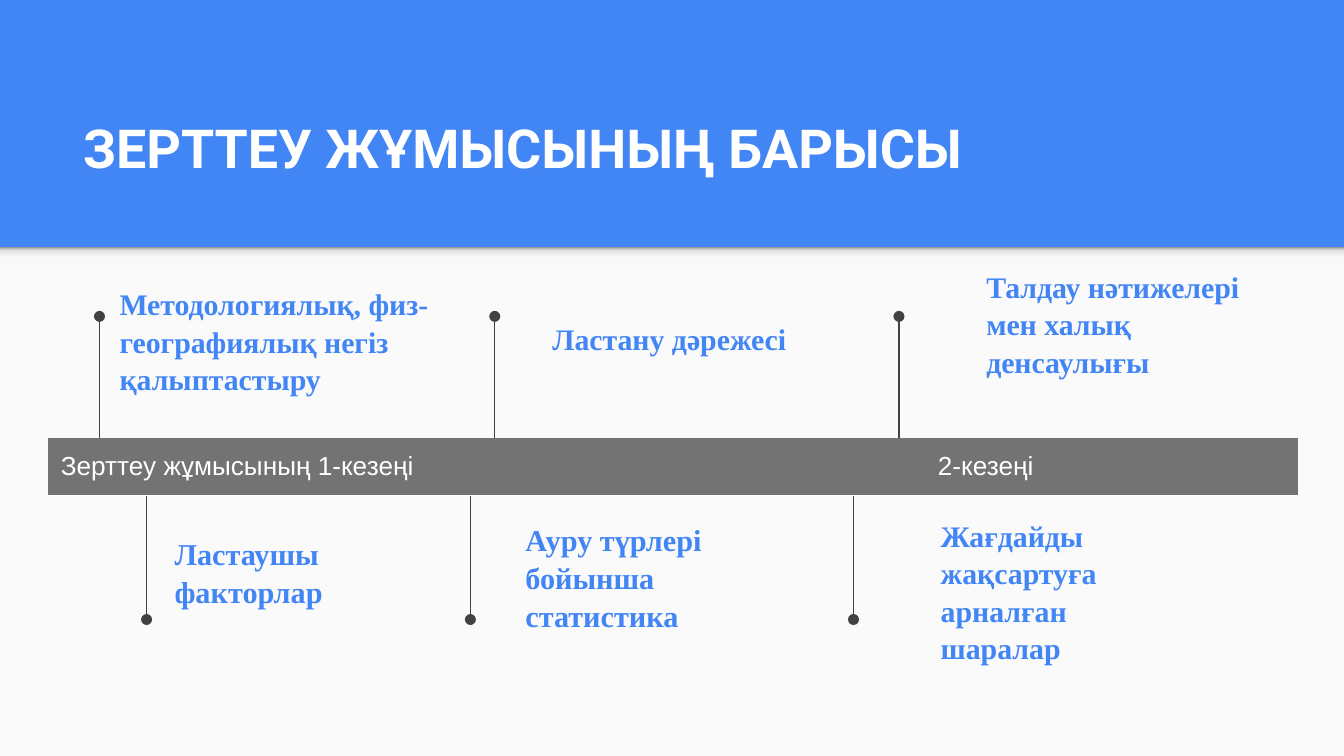
from pptx import Presentation
from pptx import util as u
from pptx.dml.color import RGBColor
from pptx.enum import shapes, text
from pptx.oxml import parse_xml
from pptx.oxml.ns import nsdecls

BLUE = RGBColor(0x42, 0x85, 0xF4)
PALE = RGBColor(0xFA, 0xFA, 0xFA)
WHITE = RGBColor(0xFF, 0xFF, 0xFF)
GREY = RGBColor(0x73, 0x73, 0x73)
DARK = RGBColor(0x42, 0x42, 0x42)

WIDE, HIGH, TOP = 25.4, 14.29, 4.67
HEAD = ("ЗЕРТТЕУ ЖҰМЫСЫНЫҢ БАРЫСЫ", (1.32, 2.06, 22.83, 2.13))
NOTES = [
    ("Методологиялық, физ-географиялық негіз қалыптастыру", (2.01, 5.05, 7.04, 2.77), 16),
    ("Ластану дәрежесі", (10.19, 5.26, 5.82, 2.26), 16),
    ("Талдау нәтижелері мен халық денсаулығы", (18.39, 5.56, 5.36, 1.09), 16),
    ("Ластаушы факторлар", (3.05, 10.26, 5.03, 1.09), 16.2),
    ("Ауру түрлері бойынша статистика", (9.68, 10.36, 5.41, 1.09), 16.2),
    ("Жағдайды жақсартуға арналған шаралар", (17.53, 10.62, 4.75, 1.09), 16),
]
STAGES = [
    ("Зерттеу жұмысының 1-кезеңі", text.PP_ALIGN.LEFT),
    ("2-кезеңі", text.PP_ALIGN.CENTER),
]
BAR = (0.9, 8.28, 23.64, 1.08)
PINS = [(8.3, 5.98, (1.88, 9.35, 16.99)), (9.38, 11.71, (2.77, 8.89, 16.13))]
SHADE = [(0, "F9F9F9"), (36, "F9F9F9"), (80, "DEDEDE"), (100, "999999")]


def place(shape, box):
    for name, size in zip(("left", "top", "width", "height"), box):
        setattr(shape, name, u.Cm(size))


def write(frame, words, font, align=text.PP_ALIGN.LEFT, space=1.0):
    par = frame.paragraphs[0]
    par.alignment, par.line_spacing = align, space
    run = par.add_run()
    run.text = words
    run.font.color.rgb = font["color"]
    for name in ("name", "size", "bold"):
        setattr(run.font, name, font[name])


def inset(frame, anchor, **extra):
    form = {f"margin_{side}": u.Cm(0.25) for side in ("left", "right", "top", "bottom")}
    form.update(word_wrap=True, auto_size=text.MSO_AUTO_SIZE.NONE, vertical_anchor=anchor)
    form.update(extra)
    for name, value in form.items():
        setattr(frame, name, value)


def panel(slide, height):
    box = slide.shapes.add_shape(
        shapes.MSO_SHAPE.RECTANGLE, 0, u.Cm(TOP), u.Cm(WIDE), u.Cm(height))
    box.shadow.inherit = False
    box.line.fill.background()
    return box


def shade(box):
    stops = "".join(
        f'<a:gs pos="{pos * 1000}"><a:srgbClr val="{tint}"/></a:gs>' for pos, tint in SHADE)
    box.fill.background()
    old = box._element.spPr.find(".//{*}noFill")
    old.getparent().replace(old, parse_xml(
        f'<a:gradFill {nsdecls("a")}><a:gsLst>{stops}</a:gsLst>'
        '<a:lin ang="16200000" scaled="0"/></a:gradFill>'))


def pin(slide, x, start, end):
    line = slide.shapes.add_connector(
        shapes.MSO_CONNECTOR.STRAIGHT, u.Cm(x), u.Cm(start), u.Cm(x), u.Cm(end))
    line.line.color.rgb = DARK
    line.line.width = u.Pt(0.75)
    line.line._get_or_add_ln().append(parse_xml(f'<a:tailEnd {nsdecls("a")} type="oval"/>'))
    line._element.spPr.append(parse_xml(f'<a:effectLst {nsdecls("a")}/>'))


def bar(slide):
    grid = slide.shapes.add_table(1, len(STAGES), *map(u.Cm, BAR)).table
    grid.first_row = grid.horz_banding = False
    font = dict(name="Arial", size=u.Pt(14), bold=False, color=WHITE)
    for cell, (words, align) in zip(grid.iter_cells(), STAGES):
        for side in "LRTB":
            cell._tc.get_or_add_tcPr().append(
                parse_xml(f'<a:ln{side} {nsdecls("a")} w="0"><a:noFill/></a:ln{side}>'))
        cell.fill.solid()
        cell.fill.fore_color.rgb = GREY
        for side in ("left", "right", "top", "bottom"):
            setattr(cell, f"margin_{side}", u.Cm(0.25))
        write(cell.text_frame, words, font, align)


def main():
    deck = Presentation()
    deck.slide_width, deck.slide_height = u.Cm(WIDE), u.Cm(HIGH)
    slide = deck.slides.add_slide(deck.slide_layouts[5])
    slide.background.fill.solid()
    slide.background.fill.fore_color.rgb = BLUE

    base = panel(slide, HIGH - TOP)
    base.fill.solid()
    base.fill.fore_color.rgb = PALE
    shade(panel(slide, 0.3))

    words, box = HEAD
    title = slide.shapes.title
    place(title, box)
    inset(title.text_frame, text.MSO_ANCHOR.BOTTOM, margin_top=0, margin_bottom=u.Cm(0.81))
    write(title.text_frame, words,
          dict(name="Roboto", size=u.Pt(28.8), bold=True, color=WHITE))

    for start, end, spots in PINS:
        for x in spots:
            pin(slide, x, start, end)
    bar(slide)
    for words, box, size in NOTES:
        note = slide.shapes.add_textbox(*map(u.Cm, box))
        inset(note.text_frame, text.MSO_ANCHOR.MIDDLE)
        write(note.text_frame, words,
              dict(name="Times New Roman", size=u.Pt(size), bold=True, color=BLUE), space=1.05)
    deck.save("out.pptx")


if __name__ == "__main__":
    main()
